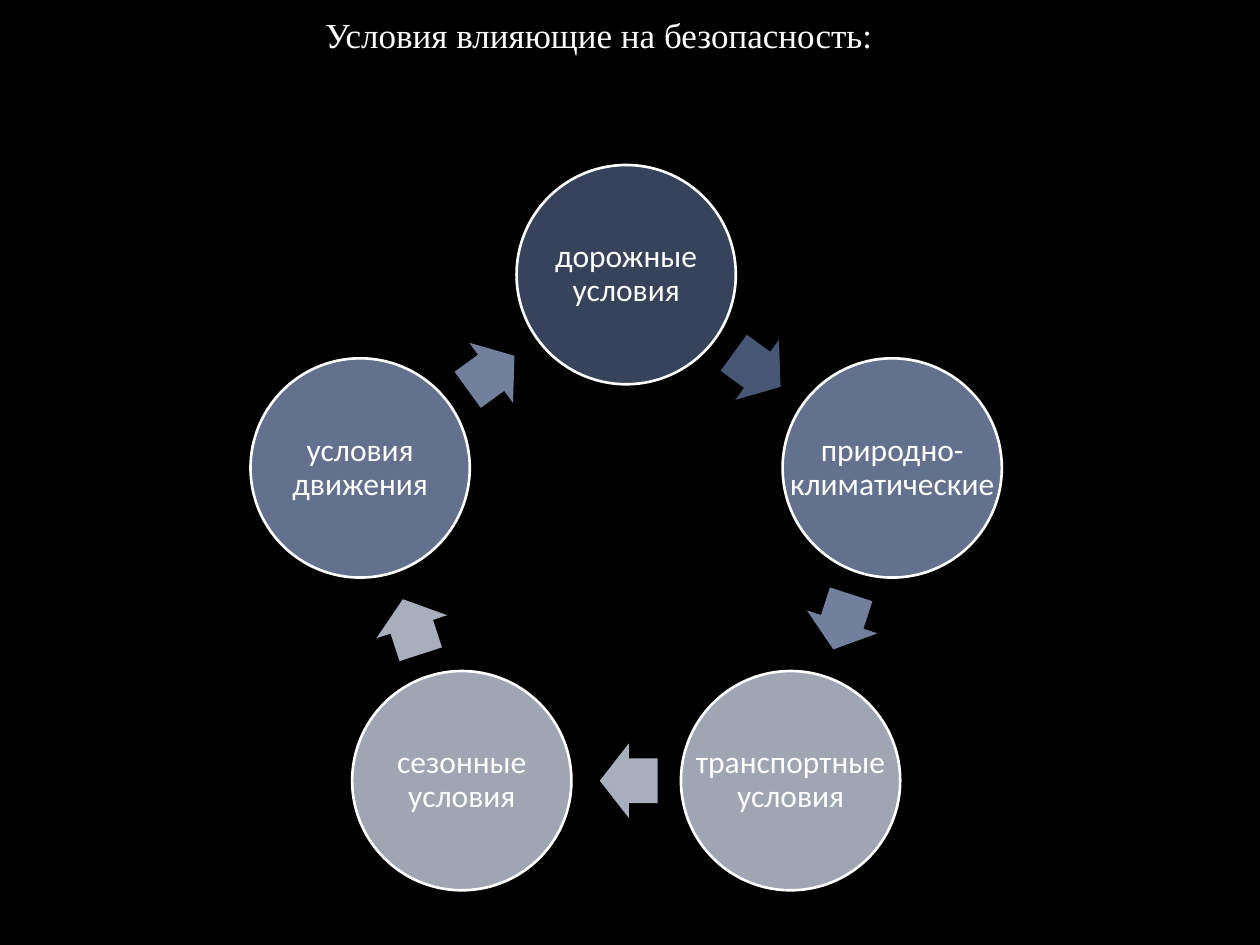
import math
from dataclasses import dataclass

from pptx import Presentation
from pptx import util as u
from pptx.dml.color import RGBColor
from pptx.enum import shapes, text


@dataclass(frozen=True)
class Theme:
    background: str = "000000"
    white: str = "FFFFFF"
    title_font: str = "Times New Roman"
    label_font: str = "Calibri"
    title_size: int = 20
    label_size: int = 18
    outline: float = 1.5


class Deck:
    """Holds the theme and the current slide."""

    def __init__(self, prs, theme):
        self.theme = theme
        self.s = prs.slides.add_slide(prs.slide_layouts[5])
        self.paint(self.s.background.fill, theme.background)

    @staticmethod
    def paint(fill, color):
        fill.solid()
        fill.fore_color.rgb = RGBColor.from_string(color)

    def run(self, p, words, font, size):
        r = p.add_run()
        r.text = words
        r.font.name = font
        r.font.size = u.Pt(size)
        r.font.color.rgb = RGBColor.from_string(self.theme.white)

    def title(self, words, left, top, width, height):
        sp = self.s.shapes.title
        sp.left, sp.top = u.Inches(left), u.Inches(top)
        sp.width, sp.height = u.Inches(width), u.Inches(height)
        tf = sp.text_frame
        tf.word_wrap = False
        tf.auto_size = text.MSO_AUTO_SIZE.SHAPE_TO_FIT_TEXT
        tf.vertical_anchor = text.MSO_ANCHOR.TOP
        p = tf.paragraphs[0]
        p.alignment = text.PP_ALIGN.LEFT
        self.run(p, words, self.theme.title_font, self.theme.title_size)

    def shape(self, kind, x, y, width, height, color):
        """Add a flat preset shape centred on x, y."""
        sp = self.s.shapes.add_shape(
            kind, u.Inches(x - width / 2), u.Inches(y - height / 2),
            u.Inches(width), u.Inches(height))
        sp.shadow.inherit = False
        self.paint(sp.fill, color)
        sp.line.fill.background()
        return sp

    def circle(self, x, y, size, color):
        sp = self.shape(shapes.MSO_SHAPE.OVAL, x, y, size, size, color)
        self.paint(sp.line.fill, self.theme.white)
        sp.line.width = u.Pt(self.theme.outline)

    def label(self, words, x, y, size):
        """Add text across the full width of a circle."""
        sp = self.s.shapes.add_textbox(
            u.Inches(x - size / 2), u.Inches(y - size / 2),
            u.Inches(size), u.Inches(size))
        tf = sp.text_frame
        tf.word_wrap = True
        tf.vertical_anchor = text.MSO_ANCHOR.MIDDLE
        tf.margin_left = tf.margin_right = u.Inches(0.03)
        tf.margin_top = tf.margin_bottom = u.Inches(0.03)
        p = tf.paragraphs[0]
        p.alignment = text.PP_ALIGN.CENTER
        p.line_spacing = 0.9
        self.run(p, words, self.theme.label_font, self.theme.label_size)

    def arrow(self, x, y, angle, color):
        sp = self.shape(shapes.MSO_SHAPE.RIGHT_ARROW, x, y, 0.46, 0.59, color)
        sp.adjustments[0], sp.adjustments[1] = 0.6, 0.5
        sp.rotation = angle


# Label, circle colour, colour of the arrow to the next circle
CONDITIONS = [
    ("дорожные условия", "37435A", "475675"),
    ("природно-климатические", "63718E", "727F9D"),
    ("транспортные условия", "A0A5B3", "A8AEBB"),
    ("сезонные условия", "A0A5B3", "A8AEBB"),
    ("условия движения", "63718E", "727F9D"),
]
CENTER_X, CENTER_Y, RING = 4.97, 4.4, 2.22
CIRCLE = 1.74
ARROW_BACK = 0.02  # arrows sit slightly before the midpoint


def polar(x, y, radius, degrees):
    """Point at a clockwise angle from the right-hand direction."""
    a = math.radians(degrees)
    return x + radius * math.cos(a), y + radius * math.sin(a)


def main():
    prs = Presentation()
    prs.slide_width, prs.slide_height = u.Inches(10), u.Inches(7.5)
    deck = Deck(prs, Theme())
    deck.title("Условия влияющие на безопасность:", 2.48, 0.06, 4.59, 0.44)

    # Cycle, clockwise from the top
    step = 360 / len(CONDITIONS)
    for i, (words, circle_color, arrow_color) in enumerate(CONDITIONS):
        x, y = polar(CENTER_X, CENTER_Y, RING, i * step - 90)
        deck.circle(x, y, CIRCLE, circle_color)
        deck.label(words, x, y, CIRCLE)

        # Arrow along the chord to the next circle
        heading = (i + 0.5) * step
        chord_distance = RING * math.cos(math.radians(step / 2))
        mid = polar(CENTER_X, CENTER_Y, chord_distance, heading - 90)
        deck.arrow(*polar(*mid, -ARROW_BACK, heading), heading, arrow_color)

    prs.save("out.pptx")


if __name__ == "__main__":
    main()
